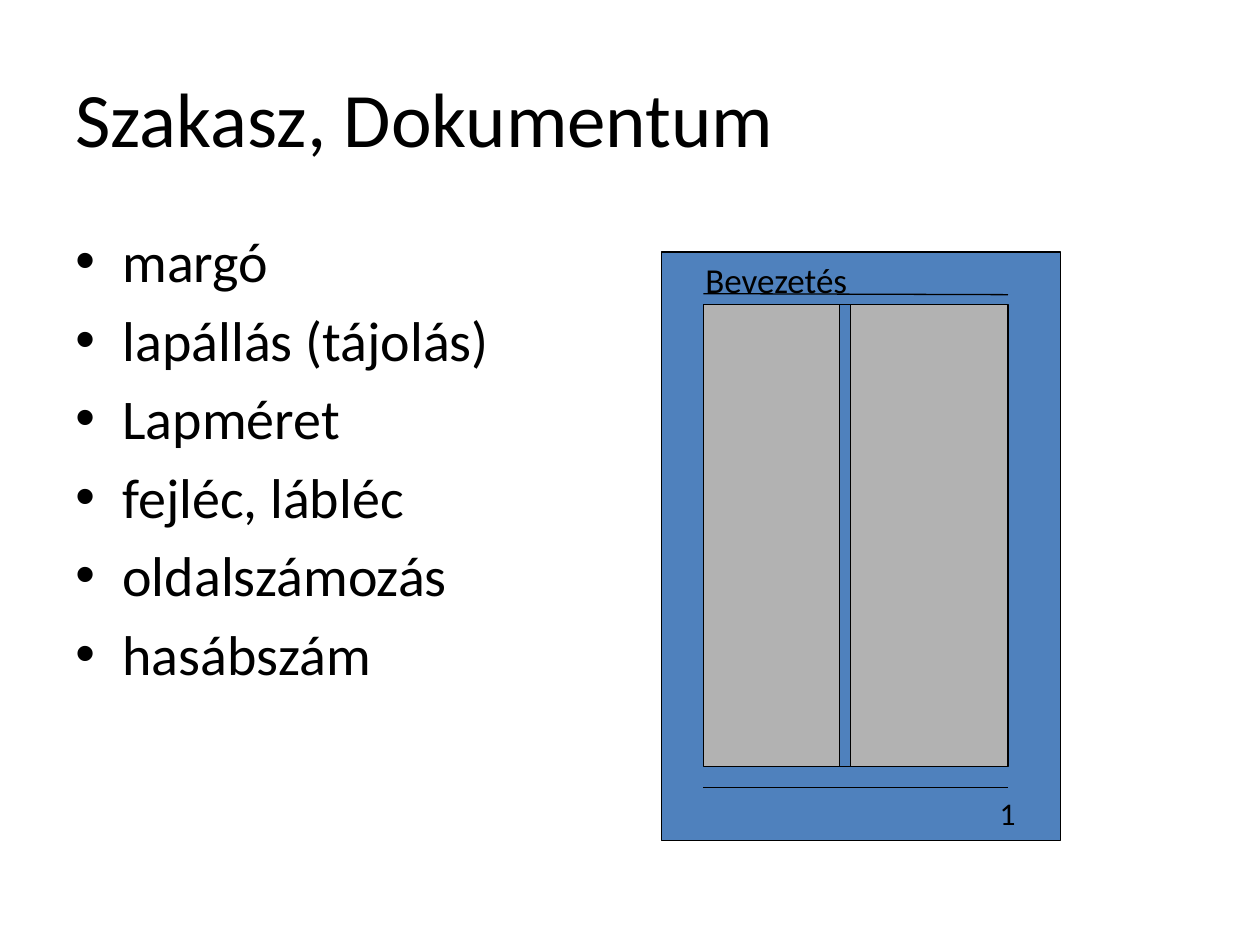
from pptx import Presentation
from pptx.dml.color import RGBColor
from pptx.enum.shapes import MSO_CONNECTOR, MSO_SHAPE
from pptx.enum.text import MSO_ANCHOR
from pptx.oxml.ns import qn
from pptx.util import Cm, Pt
from lxml.etree import SubElement

BLACK = RGBColor(0x00, 0x00, 0x00)
BLUE = RGBColor(0x4F, 0x81, 0xBD)
GRAY = RGBColor(0xB2, 0xB2, 0xB2)

deck = Presentation()
deck.slide_width, deck.slide_height = Cm(25.4), Cm(19.05)
page = deck.slides.add_slide(deck.slide_layouts[6])


def add_text(left, top, width, height, lines, size, bulleted=False):
    box = page.shapes.add_textbox(Cm(left), Cm(top), Cm(width), Cm(height))
    frame = box.text_frame
    frame.word_wrap = True
    frame.text = "\n".join(lines)
    for index, para in enumerate(frame.paragraphs):
        if bulleted:
            properties = para._p.get_or_add_pPr()
            properties.set("marL", str(Cm(0.95)))
            properties.set("indent", str(Cm(-0.95)))
            SubElement(properties, qn("a:buFont")).set("typeface", "Arial")
            SubElement(properties, qn("a:buChar")).set("char", "•")
        if index:
            para.space_before = Pt(size * 0.2)
        para.font.name = "Calibri"
        para.font.size = Pt(size)
        para.font.color.rgb = BLACK
    return box


def add_rectangle(left, top, width, height, color):
    rectangle = page.shapes.add_shape(
        MSO_SHAPE.RECTANGLE, Cm(left), Cm(top), Cm(width), Cm(height))
    rectangle.shadow.inherit = False
    rectangle.fill.solid()
    rectangle.fill.fore_color.rgb = color
    rectangle.line.color.rgb = BLACK
    rectangle.line.width = Pt(0.75)


title = add_text(1.27, 0.76, 22.86, 3.18, ["Szakasz, Dokumentum"], 44)
title.text_frame.vertical_anchor = MSO_ANCHOR.MIDDLE

topics = ["margó", "lapállás (tájolás)", "Lapméret",
          "fejléc, lábléc", "oldalszámozás", "hasábszám"]
add_text(1.27, 4.45, 22.86, 12.57, topics, 32, bulleted=True)

add_rectangle(13.34, 5.08, 8.04, 11.86, BLUE)
add_text(19.9, 15.88, 0.85, 1.27, ["1"], 18)
add_text(13.97, 5.08, 3.94, 1.1, ["Bevezetés"], 20)
add_rectangle(14.18, 6.14, 6.14, 9.32, GRAY)

for start, end in [(5.92, 5.94), (15.88, 15.88)]:
    rule = page.shapes.add_connector(
        MSO_CONNECTOR.STRAIGHT, Cm(14.18), Cm(start), Cm(20.32), Cm(end))
    rule.line.color.rgb = BLACK
    rule.line.width = Pt(0.75)
    SubElement(rule._element.spPr, qn("a:effectLst"))

add_rectangle(16.93, 6.14, 0.21, 9.32, BLUE)

deck.save("out.pptx")
